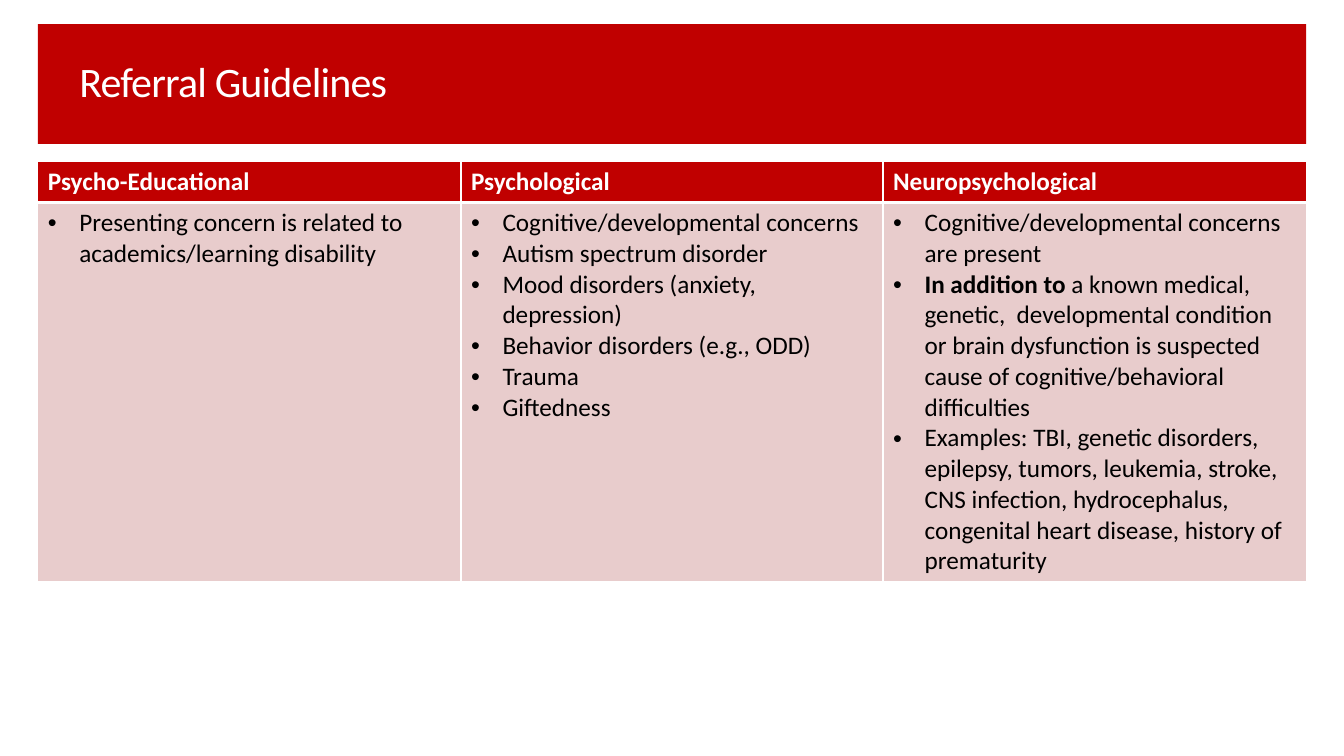
from lxml.etree import SubElement
from pptx import Presentation
from pptx.dml.color import RGBColor
from pptx.enum.shapes import MSO_SHAPE
from pptx.enum.text import MSO_ANCHOR, MSO_AUTO_SIZE, PP_ALIGN
from pptx.oxml.ns import qn
from pptx.util import Pt

PX = 9525  # EMU per px, 96 px to the inch
RED, PINK, WHITE, BLACK = "C00000", "E8CCCC", "FFFFFF", "000000"

LEFT, WIDTH = 36, 1208
COLUMN_WIDTHS = (403, 402, 403)
ROW_HEIGHTS = (39, 356)

# Each bullet is a list of (text, bold) runs
REFERRALS = {
    "Psycho-Educational": [
        [("Presenting concern is related to academics/learning disability", False)],
    ],
    "Psychological": [
        [("Cognitive/developmental concerns", False)],
        [("Autism spectrum disorder", False)],
        [("Mood disorders (anxiety, depression)", False)],
        [("Behavior disorders (e.g., ODD)", False)],
        [("Trauma", False)],
        [("Giftedness", False)],
    ],
    "Neuropsychological": [
        [("Cognitive/developmental concerns are present", False)],
        [("In addition to", True),
         (" a known medical, genetic,  developmental condition or brain "
          "dysfunction is suspected cause of cognitive/behavioral difficulties", False)],
        [("Examples: TBI, genetic disorders, epilepsy, tumors, leukemia, stroke, "
          "CNS infection, hydrocephalus, congenital heart disease, history of "
          "prematurity", False)],
    ],
}


def rgb(color):
    return RGBColor.from_string(color)


def px(*lengths):
    return [length * PX for length in lengths]


class SlideBuilder:
    font = "Calibri"

    def __init__(self, prs):
        self.s = prs.slides.add_slide(prs.slide_layouts[5])

    def style(self, r, size, color, bold=False):
        r.font.name, r.font.size, r.font.bold = self.font, Pt(size), bold
        r.font.color.rgb = rgb(color)

    def title(self, text, *box):
        sp = self.s.shapes.title
        sp.left, sp.top, sp.width, sp.height = px(*box)
        tf = sp.text_frame
        tf.text = text
        tf.word_wrap, tf.auto_size = True, MSO_AUTO_SIZE.NONE
        tf.vertical_anchor = MSO_ANCHOR.MIDDLE
        p = tf.paragraphs[0]
        p.alignment, p.line_spacing = PP_ALIGN.LEFT, 0.9
        self.style(p.runs[0], 30, WHITE)
        p.runs[0].font._element.set("spc", "-60")

    def band(self, color, *box):
        sp = self.s.shapes.add_shape(MSO_SHAPE.RECTANGLE, *px(*box))
        sp.shadow.inherit = False
        sp.fill.solid()
        sp.fill.fore_color.rgb = rgb(color)
        sp.line.fill.background()
        self.s.shapes.title.element.addprevious(sp.element)  # behind the title

    def table(self, left, top, widths, heights):
        frame = self.s.shapes.add_table(
            len(heights), len(widths), *px(left, top, sum(widths), sum(heights)))
        for column, width in zip(frame.table.columns, widths):
            column.width = width * PX
        for row, height in zip(frame.table.rows, heights):
            row.height = height * PX
        return frame.table

    def cell(self, cell, paragraphs, fill, color, top=1, bottom=1, bullets=False):
        self.borders(cell, {"L": 1, "R": 1, "T": top, "B": bottom})
        cell.fill.solid()
        cell.fill.fore_color.rgb = rgb(fill)
        tf = cell.text_frame
        for i, runs in enumerate(paragraphs):
            p = tf.add_paragraph() if i else tf.paragraphs[0]
            if bullets:
                self.bullet(p)
            for text, bold in runs:
                r = p.add_run()
                r.text = text
                self.style(r, 18, color, bold)

    def borders(self, cell, widths):
        tcPr = cell._tc.get_or_add_tcPr()
        for side, width in widths.items():
            ln = SubElement(tcPr, qn(f"a:ln{side}"), w=str(Pt(width)))
            fill = SubElement(ln, qn("a:solidFill"))
            SubElement(fill, qn("a:srgbClr"), val=WHITE)

    def bullet(self, p):
        pPr = p._p.get_or_add_pPr()
        indent = 30 * PX
        pPr.set("marL", str(indent))
        pPr.set("indent", str(-indent))
        SubElement(pPr, qn("a:buFont"), typeface="Arial")
        SubElement(pPr, qn("a:buChar"), char="•")


def main():
    prs = Presentation()
    prs.slide_width, prs.slide_height = px(1280, 720)
    slide = SlideBuilder(prs)

    # Title on its red band
    slide.title("Referral Guidelines", 66, 32, 1108, 95)
    slide.band(RED, LEFT, 23, WIDTH, 114)

    # One column for each kind of referral
    table = slide.table(LEFT, 154, COLUMN_WIDTHS, ROW_HEIGHTS)
    for col, (heading, criteria) in enumerate(REFERRALS.items()):
        slide.cell(table.cell(0, col), [[(heading, True)]], RED, WHITE, bottom=3)
        slide.cell(table.cell(1, col), criteria, PINK, BLACK, top=3, bullets=True)

    prs.save("out.pptx")


if __name__ == "__main__":
    main()
